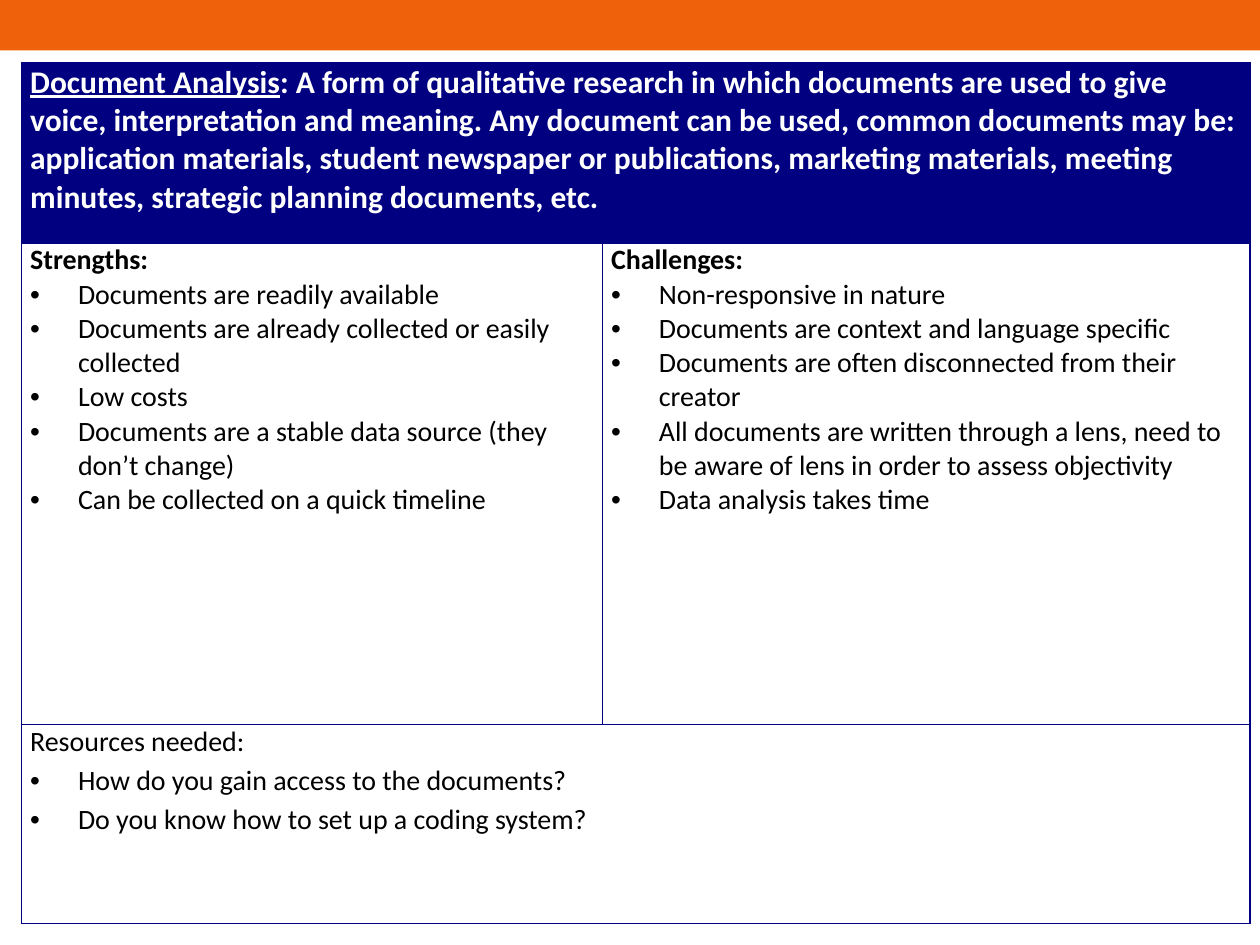
from dataclasses import dataclass

from lxml import etree
from pptx import Presentation
from pptx import util as u
from pptx.dml.color import RGBColor
from pptx.enum import shapes
from pptx.oxml.ns import qn

COLORS = {"band": "EF620B", "navy": "000080", "white": "FFFFFF", "black": "000000"}
FONT = "Calibri"
WIDTH, HEIGHT = u.Inches(10), u.Inches(7.5)
COLS = (4.61, 5.14)
ROWS = (1.43, 3.82, 1.58)
INDENT = u.Inches(0.38)


@dataclass
class Panel:
    row: int
    col: int
    heading: str
    bullets: tuple[str, ...]
    bold: bool = True
    spacing: float = 1.0


PANELS = (
    Panel(1, 0, "Strengths:", (
        "Documents are readily available",
        "Documents are already collected or easily collected",
        "Low costs",
        "Documents are a stable data source (they don’t change)",
        "Can be collected on a quick timeline",
    )),
    Panel(1, 1, "Challenges:", (
        "Non-responsive in nature",
        "Documents are context and language specific",
        "Documents are often disconnected from their creator",
        "All documents are written through a lens, need to be aware of lens "
        "in order to assess objectivity",
        "Data analysis takes time",
    )),
    Panel(2, 0, "Resources needed:", (
        "How do you gain access to the documents?",
        "Do you know how to set up a coding system?",
    ), bold=False, spacing=1.15),
)
TERM = "Document Analysis"
DEFINITION = (
    ": A form of qualitative research in which documents are used to give voice, "
    "interpretation and meaning. Any document can be used, common documents may be: "
    "application materials, student newspaper or publications, marketing materials, "
    "meeting minutes, strategic planning documents, etc."
)


def rgb(name: str) -> RGBColor:
    return RGBColor.from_string(COLORS[name])


def add_run(p, words: str, size: int, color: str, bold: bool, underline: bool = False) -> None:
    r = p.add_run()
    r.text = words
    r.font.name, r.font.size = FONT, u.Pt(size)
    r.font.bold, r.font.underline = bold, underline
    r.font.color.rgb = rgb(color)


def style_cell(cell, fill: str) -> None:
    cell.margin_left = cell.margin_right = u.Inches(0.07)
    cell.margin_top = cell.margin_bottom = 0
    tc_pr = cell._tc.get_or_add_tcPr()
    for side in ("lnL", "lnR", "lnT", "lnB"):
        ln = etree.SubElement(tc_pr, qn(f"a:{side}"), w=str(u.Pt(1)))
        solid = etree.SubElement(ln, qn("a:solidFill"))
        etree.SubElement(solid, qn("a:srgbClr"), val=COLORS["navy"])
    cell.fill.solid()
    cell.fill.fore_color.rgb = rgb(fill)


def add_bullet(tf, words: str, spacing: float) -> None:
    p = tf.add_paragraph()
    p.line_spacing = spacing
    p_pr = p._p.get_or_add_pPr()
    p_pr.set("marL", str(INDENT))
    p_pr.set("indent", str(-INDENT))
    etree.SubElement(p_pr, qn("a:buFont"), typeface="Arial")
    etree.SubElement(p_pr, qn("a:buChar"), char="•")
    add_run(p, words, 16, "black", False)


def fill_panel(table, panel: Panel) -> None:
    tf = table.cell(panel.row, panel.col).text_frame
    add_run(tf.paragraphs[0], panel.heading, 16, "black", panel.bold)
    for words in panel.bullets:
        add_bullet(tf, words, panel.spacing)


def main() -> None:
    prs = Presentation()
    prs.slide_width, prs.slide_height = WIDTH, HEIGHT
    s = prs.slides.add_slide(prs.slide_layouts[6])

    # Top band
    sp = s.shapes.add_shape(shapes.MSO_SHAPE.RECTANGLE, 0, 0, WIDTH, u.Inches(0.4))
    sp.shadow.inherit = False
    sp.fill.solid()
    sp.fill.fore_color.rgb = rgb("band")
    sp.line.fill.background()

    # Table grid
    table = s.shapes.add_table(
        len(ROWS), len(COLS), u.Inches(0.17), u.Inches(0.5),
        u.Inches(sum(COLS)), u.Inches(sum(ROWS))).table
    table.first_row = table.horz_banding = False
    for column, width in zip(table.columns, COLS):
        column.width = u.Inches(width)
    for i, height in enumerate(ROWS):
        table.rows[i].height = u.Inches(height)
        for cell in table.rows[i].cells:
            style_cell(cell, "navy" if i == 0 else "white")
    for i in (0, 2):
        table.cell(i, 0).merge(table.cell(i, 1))

    # Definition and panels
    p = table.cell(0, 0).text_frame.paragraphs[0]
    add_run(p, TERM, 18, "white", True, underline=True)
    add_run(p, DEFINITION, 18, "white", True)
    for panel in PANELS:
        fill_panel(table, panel)

    prs.save("out.pptx")


if __name__ == "__main__":
    main()
